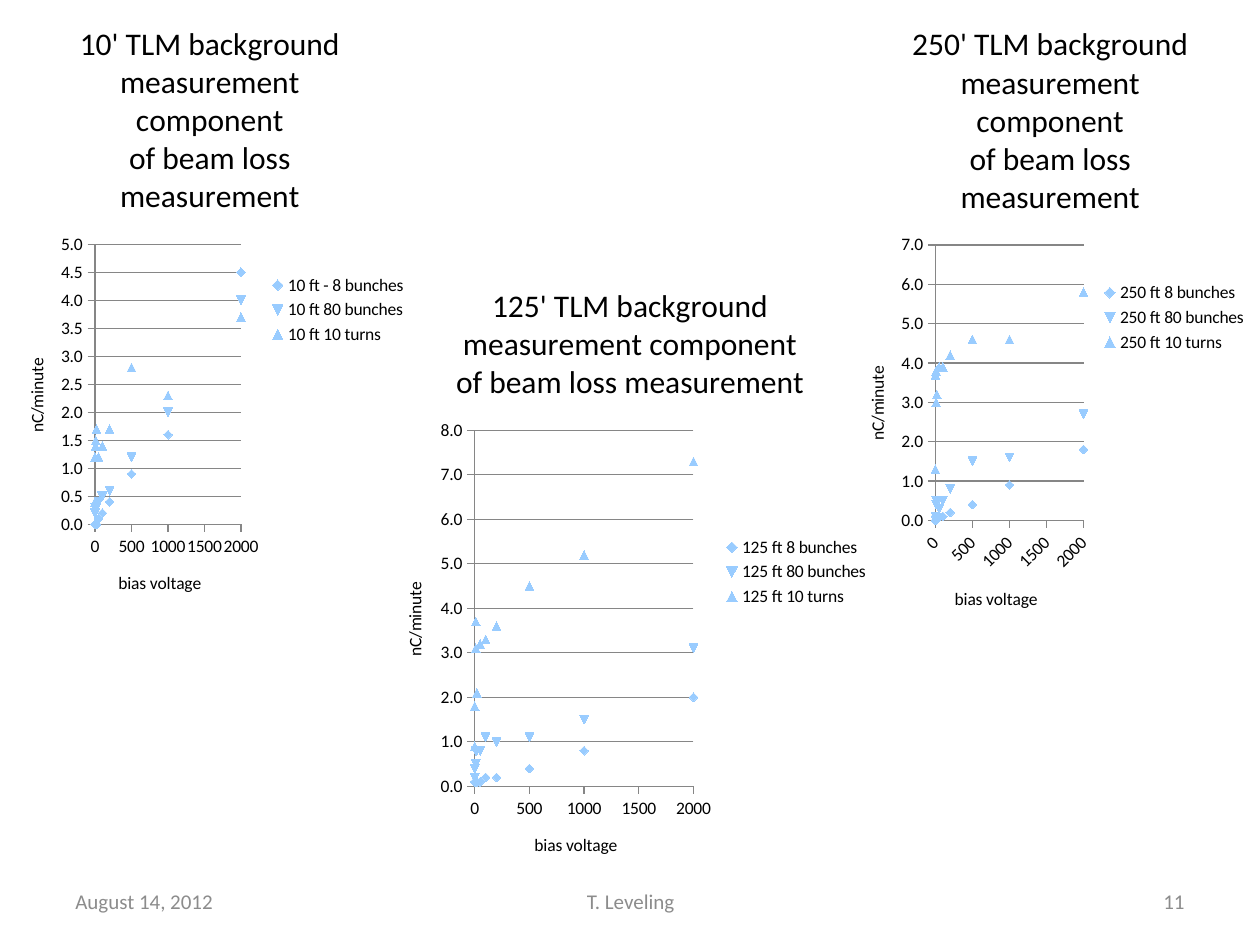
from pptx import Presentation
from pptx.chart.data import XyChartData
from pptx.dml.color import RGBColor
from pptx.enum.chart import XL_CHART_TYPE, XL_LEGEND_POSITION, XL_TICK_MARK
from pptx.enum.text import MSO_ANCHOR, PP_ALIGN
from pptx.util import Inches, Pt

FONT = "Calibri"
VOLTAGES = [0, 0, 10, 10, 20, 50, 100, 200, 500, 1000, 2000]
CHARTS = [
    ("10'", (0, 0, 3.33, 4.92), 5, 0.5, [
        ("10 ft - 8 bunches", [0, 0, 0, 0, 0, 0.1, 0.2, 0.4, 0.9, 1.6, 4.5]),
        ("10 ft 80 bunches", [0.2, 0.3, 0.3, 0.3, 0.3, 0.4, 0.5, 0.6, 1.2, 2, 4]),
        ("10 ft 10 turns", [0.4, 1.2, 1.4, 1.5, 1.7, 1.2, 1.4, 1.7, 2.8, 2.3, 3.7]),
    ]),
    ("125'", (3, 2.08, 4, 4.92), 8, 1, [
        ("125 ft 8 bunches", [0.1, 0.1, 0.1, 0.1, 0.1, 0.1, 0.2, 0.2, 0.4, 0.8, 2]),
        ("125 ft 80 bunches", [0.2, 0.4, 0.5, 0.8, 0.8, 0.8, 1.1, 1, 1.1, 1.5, 3.1]),
        ("125 ft 10 turns", [0.9, 1.8, 3.1, 3.7, 2.1, 3.2, 3.3, 3.6, 4.5, 5.2, 7.3]),
    ]),
    ("250'", (6.67, 0, 3.33, 5.04), 7, 1, [
        ("250 ft 8 bunches", [0.1, 0, 0, 0, 0.1, 0.1, 0.1, 0.2, 0.4, 0.9, 1.8]),
        ("250 ft 80 bunches", [-0.7, 0.1, 0.4, 0.5, 0.5, 0.3, 0.5, 0.8, 1.5, 1.6, 2.7]),
        ("250 ft 10 turns", [1.3, 3.7, 3.8, 3, 3.2, 3.9, 3.9, 4.2, 4.6, 4.6, 5.8]),
    ]),
]
FOOTERS = [
    ("August 14, 2012", 0.5, 2.33, PP_ALIGN.LEFT),
    ("T. Leveling", 3.42, 3.17, PP_ALIGN.CENTER),
    ("11", 7.17, 2.33, PP_ALIGN.RIGHT),
]


def rgb(value):
    return RGBColor.from_string(value)


def set_font(font, size, color="000000"):
    font.name = FONT
    font.size = Pt(size)
    font.bold = False
    font.color.rgb = rgb(color)


def write_title(tf, lines, size):
    for i, line in enumerate(lines):
        p = tf.paragraphs[0] if i == 0 else tf.add_paragraph()
        r = p.add_run()
        r.text = line
        set_font(r.font, size)


def style_axis(axis, title, top, step, number_format):
    axis.minimum_scale = 0
    axis.maximum_scale = top
    axis.major_unit = step
    axis.major_tick_mark = XL_TICK_MARK.OUTSIDE
    axis.tick_labels.number_format = number_format
    axis.tick_labels.number_format_is_linked = False
    axis.format.line.color.rgb = rgb("868686")
    axis.format.line.width = Pt(0.75)
    write_title(axis.axis_title.text_frame, [title], 10)


def add_scatter(s, distance, box, top, step, series):
    data = XyChartData()
    for name, values in series:
        xy = data.add_series(name)
        for voltage, value in zip(VOLTAGES, values):
            xy.add_data_point(voltage, value)
    chart = s.shapes.add_chart(XL_CHART_TYPE.XY_SCATTER, *map(Inches, box), data).chart
    set_font(chart.font, 10)
    chart.plots[0].vary_by_categories = False
    for plotted in chart.plots[0].series:
        plotted.smooth = False
    write_title(chart.chart_title.text_frame,
                [f"{distance} TLM background measurement component",
                 "of beam loss measurement"], 18)
    chart.chart_title.include_in_layout = False
    chart.has_legend = True
    chart.legend.position = XL_LEGEND_POSITION.RIGHT
    chart.legend.include_in_layout = False
    style_axis(chart.category_axis, "bias voltage", 2000, 500, "General")
    style_axis(chart.value_axis, "nC/minute", top, step, "0.0")
    chart.category_axis.has_major_gridlines = False
    chart.value_axis.has_major_gridlines = True
    grid = chart.value_axis.major_gridlines.format.line
    grid.color.rgb = rgb("868686")
    grid.width = Pt(0.75)


def add_footer(s, text, left, width, align):
    tf = s.shapes.add_textbox(Inches(left), Inches(6.95), Inches(width), Inches(0.4)).text_frame
    tf.word_wrap = True
    tf.vertical_anchor = MSO_ANCHOR.MIDDLE
    p = tf.paragraphs[0]
    p.alignment = align
    r = p.add_run()
    r.text = text
    set_font(r.font, 12, "8C8C8C")


def main():
    prs = Presentation()
    prs.slide_width, prs.slide_height = Inches(10), Inches(7.5)
    s = prs.slides.add_slide(prs.slide_layouts[6])
    for footer in FOOTERS:
        add_footer(s, *footer)
    for chart in CHARTS:
        add_scatter(s, *chart)
    prs.save("out.pptx")


if __name__ == "__main__":
    main()
